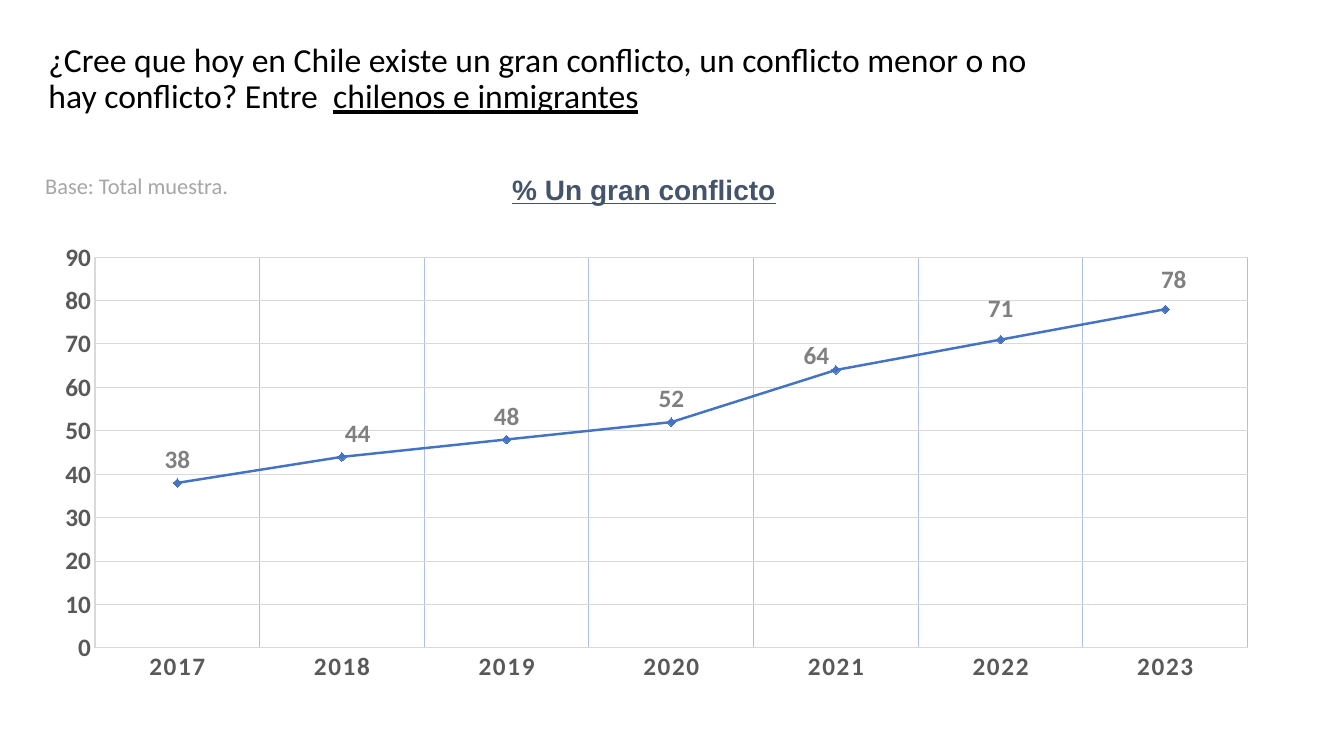
from dataclasses import dataclass

from lxml import etree
from pptx import Presentation
from pptx.chart.data import CategoryChartData
from pptx.dml.color import RGBColor as RGB
from pptx.enum.chart import XL_CHART_TYPE as ChartType
from pptx.enum.chart import XL_LABEL_POSITION as LabelPos
from pptx.enum.chart import XL_MARKER_STYLE as Marker
from pptx.enum.chart import XL_TICK_MARK as Tick
from pptx.enum.text import MSO_ANCHOR as Anchor
from pptx.enum.text import MSO_AUTO_SIZE as AutoSize
from pptx.enum.text import PP_ALIGN as Align
from pptx.oxml.ns import qn
from pptx.util import Inches, Pt


@dataclass(frozen=True)
class Theme:
    body: str = "Calibri"
    heading: str = "Arial"
    ink: str = "000000"
    navy: str = "44546A"
    muted: str = "A6A6A6"
    axis: str = "595959"
    label: str = "808080"
    grid: str = "D9D9D9"
    divider: str = "ABC0E4"
    accent: str = "4472C4"
    title_size: int = 24
    subtitle_size: int = 20
    note_size: int = 16
    chart_size: int = 18


T = Theme()
WIDTH, HEIGHT = Inches(13.33), Inches(7.5)
YEARS = [str(year) for year in range(2017, 2024)]
SHARES = [38, 44, 48, 52, 64, 71, 78]
LABEL_SHIFTS = {1: (0.013, 0), 4: (-0.016, 0.02), 5: (0, -0.018), 6: (0.007, -0.015)}
PLOT_AREA = {"layoutTarget": "inner", "xMode": "edge", "yMode": "edge",
             "x": 0.04, "y": 0.03, "w": 0.948, "h": 0.865}


def box(left, top, width, height):
    return (int(WIDTH * left / 100), int(HEIGHT * top / 100),
            int(WIDTH * width / 100), int(HEIGHT * height / 100))


def style(font, name, size, color, bold=False, underline=False):
    font.name, font.size = name, Pt(size)
    font.color.rgb = RGB.from_string(color)
    font.bold, font.underline = bold, underline


def style_line(line, color, width=0.75):
    line.color.rgb = RGB.from_string(color)
    line.width = Pt(width)


def manual_layout(**settings):
    layout = etree.Element(qn("c:layout"))
    manual = etree.SubElement(layout, qn("c:manualLayout"))
    for key, value in settings.items():
        etree.SubElement(manual, qn(f"c:{key}")).set("val", str(value))
    return layout


def add_title(s, area, question, groups):
    sp = s.shapes.title
    sp.left, sp.top, sp.width, sp.height = area
    tf = sp.text_frame
    tf.word_wrap, tf.auto_size = True, AutoSize.NONE
    tf.vertical_anchor = Anchor.MIDDLE
    p = tf.paragraphs[0]
    p.alignment, p.line_spacing = Align.LEFT, 0.9
    for text, underline in ((question, False), (groups, True)):
        r = p.add_run()
        r.text = text
        style(r.font, T.body, T.title_size, T.ink, underline=underline)


def add_label(s, area, text, *look, inset=True, before=0, **emphasis):
    tf = s.shapes.add_textbox(*area).text_frame
    tf.word_wrap, tf.auto_size = True, AutoSize.SHAPE_TO_FIT_TEXT
    if not inset:
        tf.margin_left = tf.margin_top = tf.margin_right = tf.margin_bottom = 0
    p = tf.paragraphs[0]
    p.text = text
    p.space_before = Pt(before)
    style(p.runs[0].font, *look, **emphasis)


def style_axis(axis, grid):
    axis.major_tick_mark = axis.minor_tick_mark = Tick.NONE
    axis.has_major_gridlines = True
    style_line(axis.major_gridlines.format.line, grid)
    style_line(axis.format.line, T.grid)
    style(axis.tick_labels.font, T.body, T.chart_size, T.axis, bold=True)


def style_series(series):
    series.smooth = False
    style_line(series.format.line, T.accent, 1.75)
    series.marker.style, series.marker.size = Marker.DIAMOND, 6
    fill = series.marker.format.fill
    fill.solid()
    fill.fore_color.rgb = RGB.from_string(T.accent)
    style_line(series.marker.format.line, T.accent)


def style_labels(series):
    labels = series.data_labels
    labels.show_value = True
    shifted = [series.points[i].data_label for i in LABEL_SHIFTS]
    for label in (labels, *shifted):
        label.position = LabelPos.ABOVE
        style(label.font, T.body, T.chart_size, T.label, bold=True)
    for node in series.points[0].data_label and labels._element.findall(qn("c:dLbl")):
        idx = node.find(qn("c:idx"))
        x, y = LABEL_SHIFTS[int(idx.get("val"))]
        idx.addnext(manual_layout(x=x, y=y))


def add_line_chart(s, area):
    data = CategoryChartData()
    data.categories = YEARS
    data.add_series("Series 1", SHARES)
    chart = s.shapes.add_chart(ChartType.LINE_MARKERS, *area, data).chart
    chart.has_title = chart.has_legend = False
    style(chart.font, T.body, 10, T.ink)
    style_axis(chart.category_axis, T.divider)
    style_axis(chart.value_axis, T.grid)
    years_text = chart.category_axis._element.find(qn("c:txPr"))
    years_text.find(".//" + qn("a:defRPr")).set("spc", "120")
    axis = chart.value_axis
    axis.minimum_scale, axis.maximum_scale, axis.major_unit = 0, 90, 10
    plot = chart.plots[0]
    plot.vary_by_categories = False
    style_series(plot.series[0])
    style_labels(plot.series[0])
    plot_area = chart._chartSpace.find(".//" + qn("c:plotArea"))
    for old in plot_area.findall(qn("c:layout")):
        plot_area.remove(old)
    plot_area.insert(0, manual_layout(**PLOT_AREA))


def main():
    prs = Presentation()
    prs.slide_width, prs.slide_height = WIDTH, HEIGHT
    s = prs.slides.add_slide(prs.slide_layouts[5])
    add_title(s, box(2.85, 4.93, 77.04, 11.2),
              "¿Cree que hoy en Chile existe un gran conflicto, un conflicto menor "
              "o no hay conflicto? Entre  ", "chilenos e inmigrantes")
    add_line_chart(s, box(3.45, 32, 90.47, 60))
    add_label(s, box(38.11, 22.8, 35.48, 4.53), "% Un gran conflicto",
              T.heading, T.subtitle_size, T.navy,
              inset=False, before=4, bold=True, underline=True)
    add_label(s, box(2.63, 22.13, 63.24, 4.93), "Base: Total muestra.",
              T.body, T.note_size, T.muted)
    prs.save("out.pptx")


if __name__ == "__main__":
    main()
